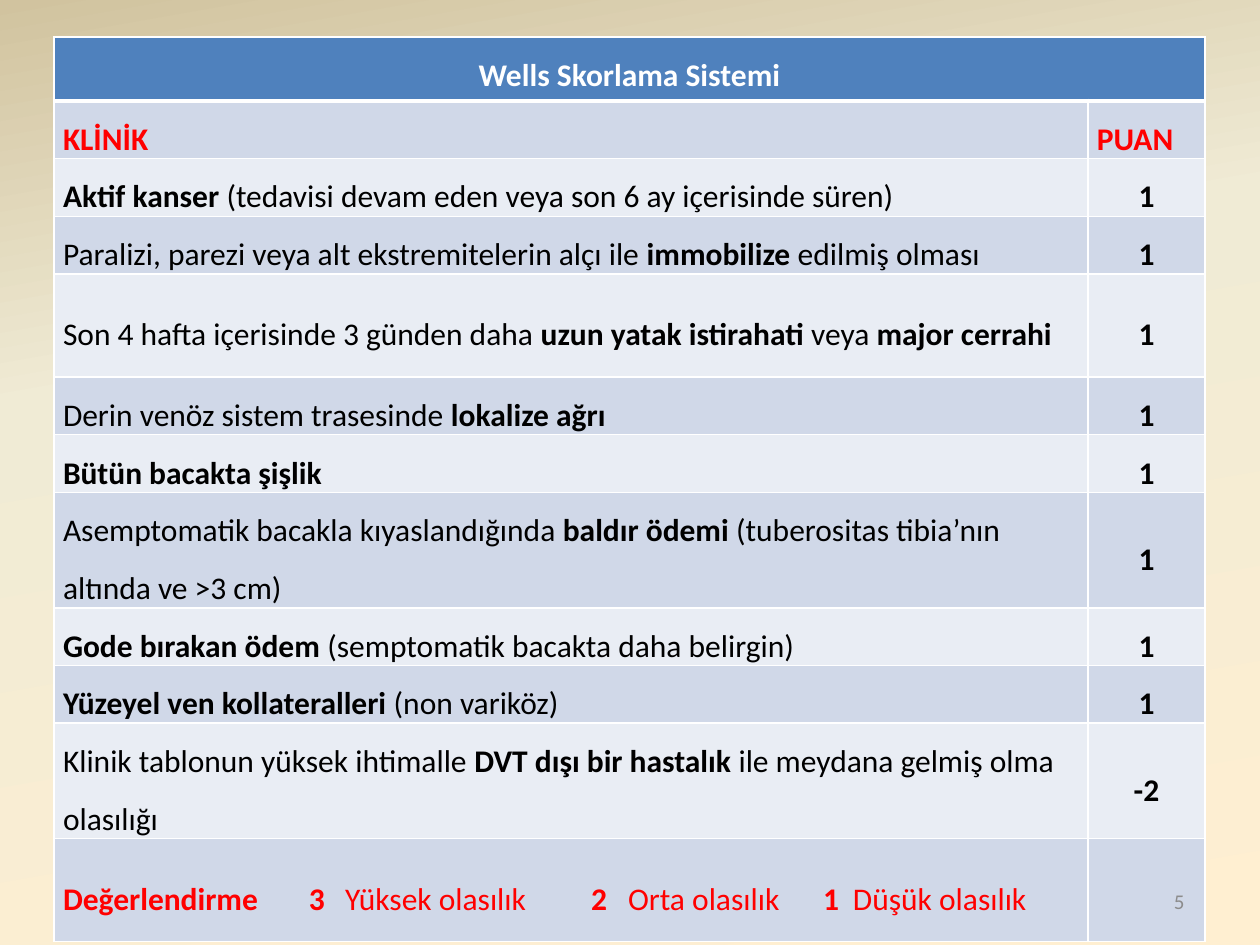
"""Build the Wells scoring table slide."""
from copy import deepcopy
from dataclasses import dataclass

from lxml import etree
from pptx import Presentation
from pptx import util as u
from pptx.dml import color
from pptx.enum import text
from pptx.oxml import ns

EMU_PER_PX = 914400 / 126


@dataclass(frozen=True)
class Theme:
    """Colours and type sizes of the slide."""
    font: str = "Calibri"
    body_size: int = 18
    number_size: int = 12
    header: str = "4F81BD"
    bands: tuple = ("E9EDF4", "D0D8E8")
    white: str = "FFFFFF"
    black: str = "000000"
    red: str = "FF0000"
    grey: str = "8C8C8C"
    background: tuple = ((0, "FFEFD1"), (0.65, "F0EBD5"), (1, "D1C39F"))


TITLE = "Wells Skorlama Sistemi"
ROWS = [
    ("*KLİNİK*", "*PUAN*", 54),
    ("*Aktif kanser *(tedavisi devam eden veya son 6 ay içerisinde süren)", "*1*", 54),
    ("Paralizi, parezi veya alt ekstremitelerin alçı ile *immobilize *edilmiş olması", "*1*", 54),
    ("Son 4 hafta içerisinde 3 günden daha *uzun yatak istirahati *veya *major cerrahi*", "*1*", 103),
    ("Derin venöz sistem trasesinde *lokalize ağrı*", "*1*", 54),
    ("*Bütün bacakta şişlik*", "*1*", 54),
    ("Asemptomatik bacakla kıyaslandığında *baldır ödemi *(tuberositas tibia’nın altında ve >3 cm)",
     "*1*", 110),
    ("*Gode bırakan ödem *(semptomatik bacakta daha belirgin)", "*1*", 54),
    ("*Yüzeyel ven kollateralleri *(non variköz)", "*1*", 54),
    ("Klinik tablonun yüksek ihtimalle *DVT dışı bir hastalık *ile meydana gelmiş olma olasılığı",
     "*-2*", 110),
    ("*Değerlendirme\t3*\tYüksek olasılık\t*2*\tOrta olasılık\t*1*\tDüşük olasılık", "", 103),
]
TITLE_HEIGHT = 64
COLUMNS = (1034, 117)
RESULT_TABS = (246, 282, 528, 565, 760, 790)


def px(length):
    """Turn pixels into EMU."""
    return u.Emu(round(length * EMU_PER_PX))


class SlideBuilder:
    """Draw styled elements on the current slide."""

    def __init__(self, slide, theme):
        """Keep the slide and its theme."""
        self.slide = slide
        self.theme = theme

    def background(self):
        """Fill the background with a three-stop gradient."""
        fill = self.slide.background.fill
        fill.gradient()
        fill.gradient_angle = 100
        first_stop = self.slide.element.xpath(".//a:gsLst/a:gs")[0]
        first_stop.addnext(deepcopy(first_stop))
        for stop, (position, rgb) in zip(fill.gradient_stops, self.theme.background):
            stop.position = position
            stop.color.rgb = color.RGBColor.from_string(rgb)

    def add_runs(self, paragraph, marked_text, rgb, size, align):
        """Add text in which asterisks enclose the bold parts."""
        paragraph.alignment = align
        for index, part in enumerate(marked_text.split("*")):
            if part:
                run = paragraph.add_run()
                run.text = part
                run.font.name = self.theme.font
                run.font.size = u.Pt(size)
                run.font.bold = index % 2 == 1
                run.font.color.rgb = color.RGBColor.from_string(rgb)

    def borders(self, cell, top=1, bottom=1):
        """Give a cell white borders with widths in points."""
        properties = cell._tc.get_or_add_tcPr()
        for side, width in (("L", 1), ("R", 1), ("T", top), ("B", bottom)):
            line = etree.SubElement(properties, ns.qn(f"a:ln{side}"), w=str(u.Pt(width)))
            fill = etree.SubElement(line, ns.qn("a:solidFill"))
            etree.SubElement(fill, ns.qn("a:srgbClr"), val=self.theme.white)

    def cell(self, cell, marked_text, fill, rgb, align, anchor, top=1, bottom=1):
        """Fill, border and letter one table cell."""
        self.borders(cell, top, bottom)
        cell.fill.solid()
        cell.fill.fore_color.rgb = color.RGBColor.from_string(fill)
        cell.margin_left = cell.margin_right = px(9)
        cell.margin_top = cell.margin_bottom = 0
        cell.vertical_anchor = anchor
        paragraph = cell.text_frame.paragraphs[0]
        self.add_runs(paragraph, marked_text, rgb, self.theme.body_size, align)
        if marked_text:
            paragraph.line_spacing = 1.5
        return paragraph

    def tab_stops(self, paragraph, positions):
        """Set left tab stops on a paragraph."""
        tabs = etree.SubElement(paragraph._p.get_or_add_pPr(), ns.qn("a:tabLst"))
        for position in positions:
            etree.SubElement(tabs, ns.qn("a:tab"), pos=str(px(position)), algn="l")

    def score_table(self, left, top):
        """Add the scoring table."""
        theme = self.theme
        heights = [TITLE_HEIGHT] + [height for _, _, height in ROWS]
        table = self.slide.shapes.add_table(
            len(heights), len(COLUMNS), px(left), px(top), px(sum(COLUMNS)), px(sum(heights))).table
        for column, width in zip(table.columns, COLUMNS):
            column.width = px(width)
        for row, height in zip(table.rows, heights):
            row.height = px(height)
        left_align, center = text.PP_ALIGN.LEFT, text.PP_ALIGN.CENTER
        table.cell(0, 0).merge(table.cell(0, 1))
        for column, title in enumerate((f"*{TITLE}*", "")):
            self.cell(table.cell(0, column), title, theme.header, theme.white, center,
                      text.MSO_ANCHOR.TOP, bottom=3)
        for number, (criterion, points, _) in enumerate(ROWS, 1):
            is_heading = number == 1
            rgb = theme.red if number in (1, len(ROWS)) else theme.black
            anchor = text.MSO_ANCHOR.TOP if is_heading else text.MSO_ANCHOR.MIDDLE
            aligns = (left_align, left_align if is_heading else center)
            for column, value in enumerate((criterion, points)):
                paragraph = self.cell(table.cell(number, column), value, theme.bands[number % 2], rgb,
                                      aligns[column], anchor, top=3 if is_heading else 1)
                if "\t" in value:
                    self.tab_stops(paragraph, RESULT_TABS)

    def page_number(self, number, left, top, width, height):
        """Add the right-aligned page number."""
        frame = self.slide.shapes.add_textbox(px(left), px(top), px(width), px(height)).text_frame
        frame.word_wrap = True
        frame.vertical_anchor = text.MSO_ANCHOR.MIDDLE
        self.add_runs(frame.paragraphs[0], number, self.theme.grey, self.theme.number_size,
                      text.PP_ALIGN.RIGHT)


def main():
    """Build and save the presentation."""
    presentation = Presentation()
    presentation.slide_width, presentation.slide_height = px(1260), px(945)
    slide = presentation.slides.add_slide(presentation.slide_layouts[6])
    builder = SlideBuilder(slide, Theme())
    builder.background()
    builder.score_table(54, 37)
    builder.page_number("5", 903, 876, 294, 50)
    presentation.save("out.pptx")


if __name__ == "__main__":
    main()
